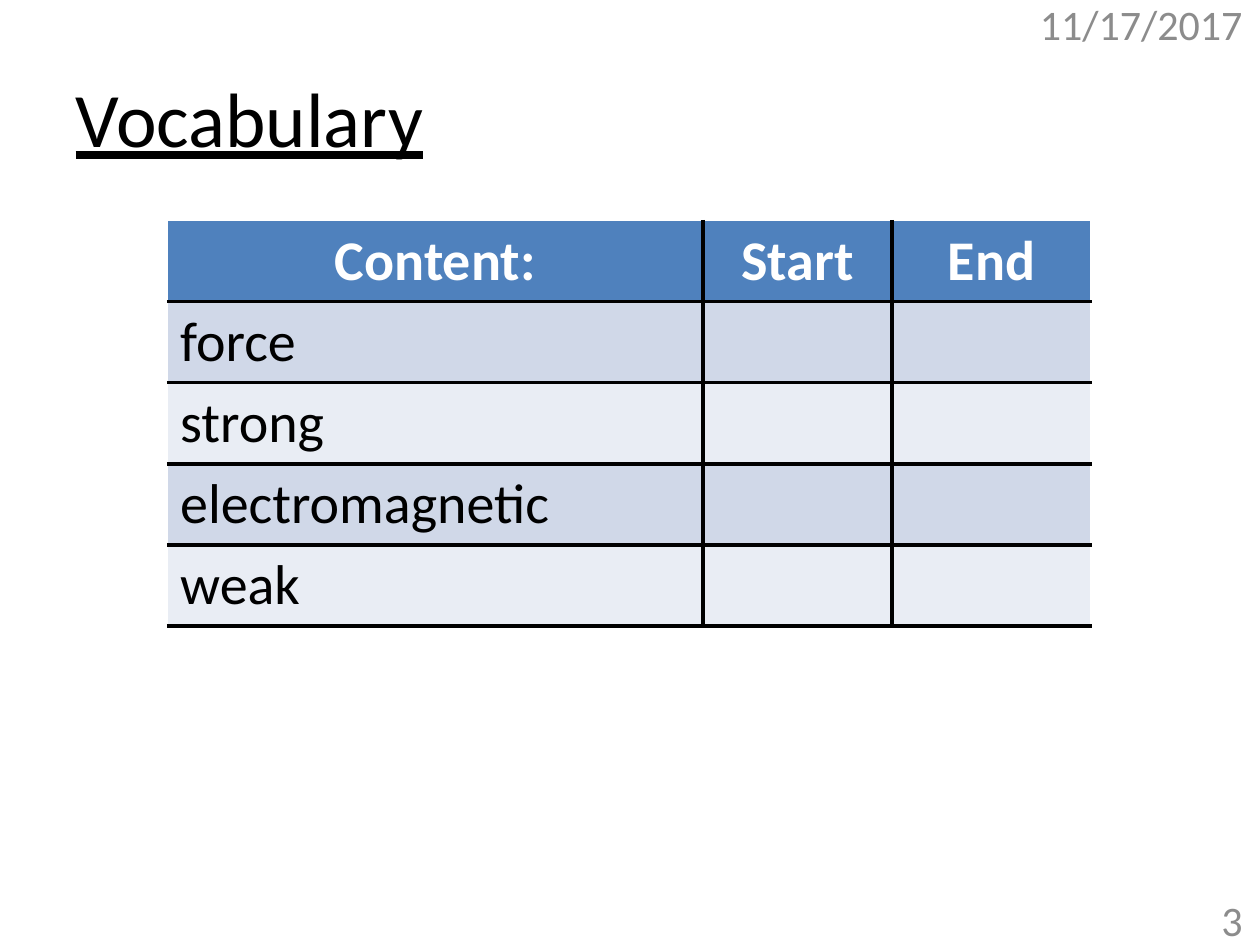
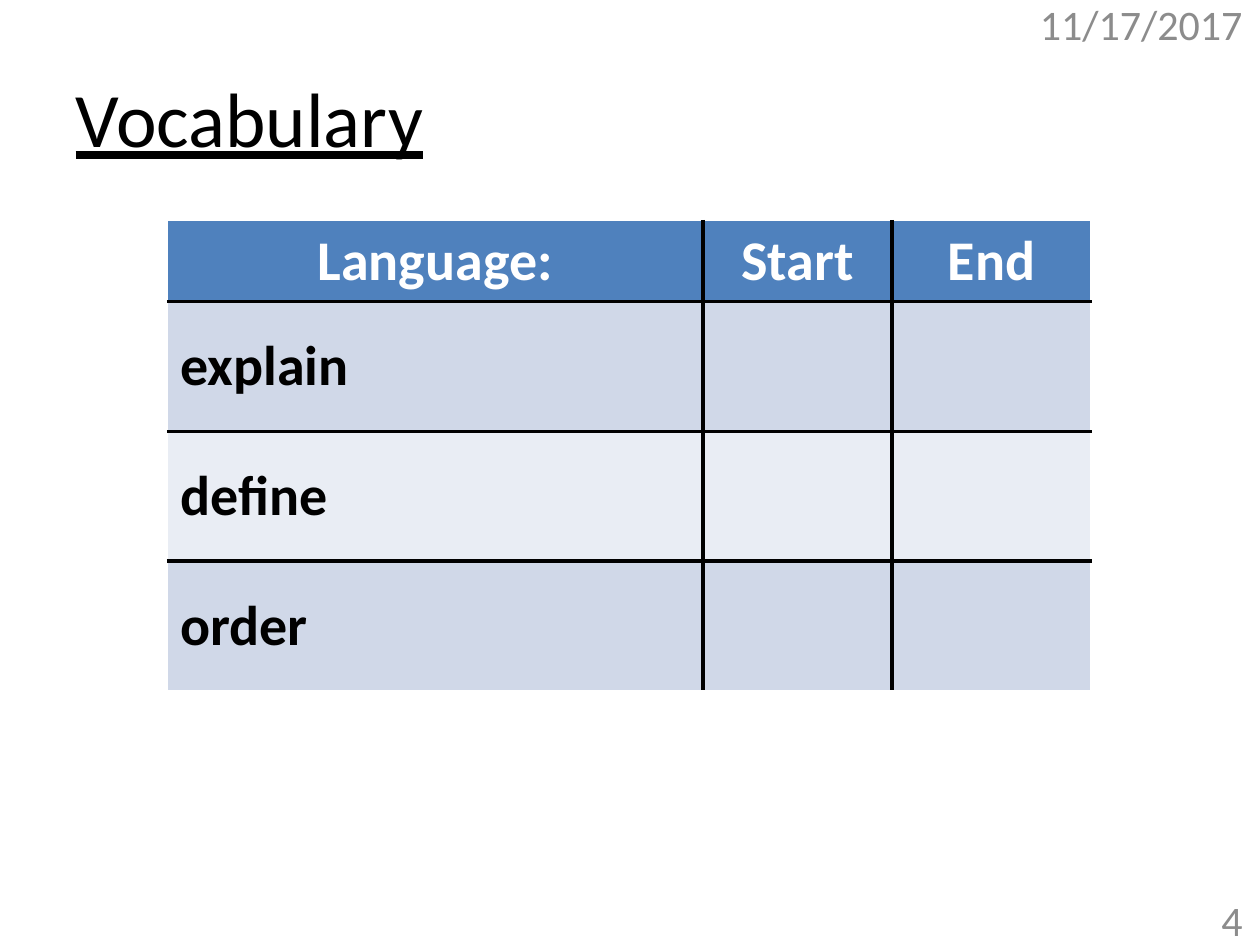
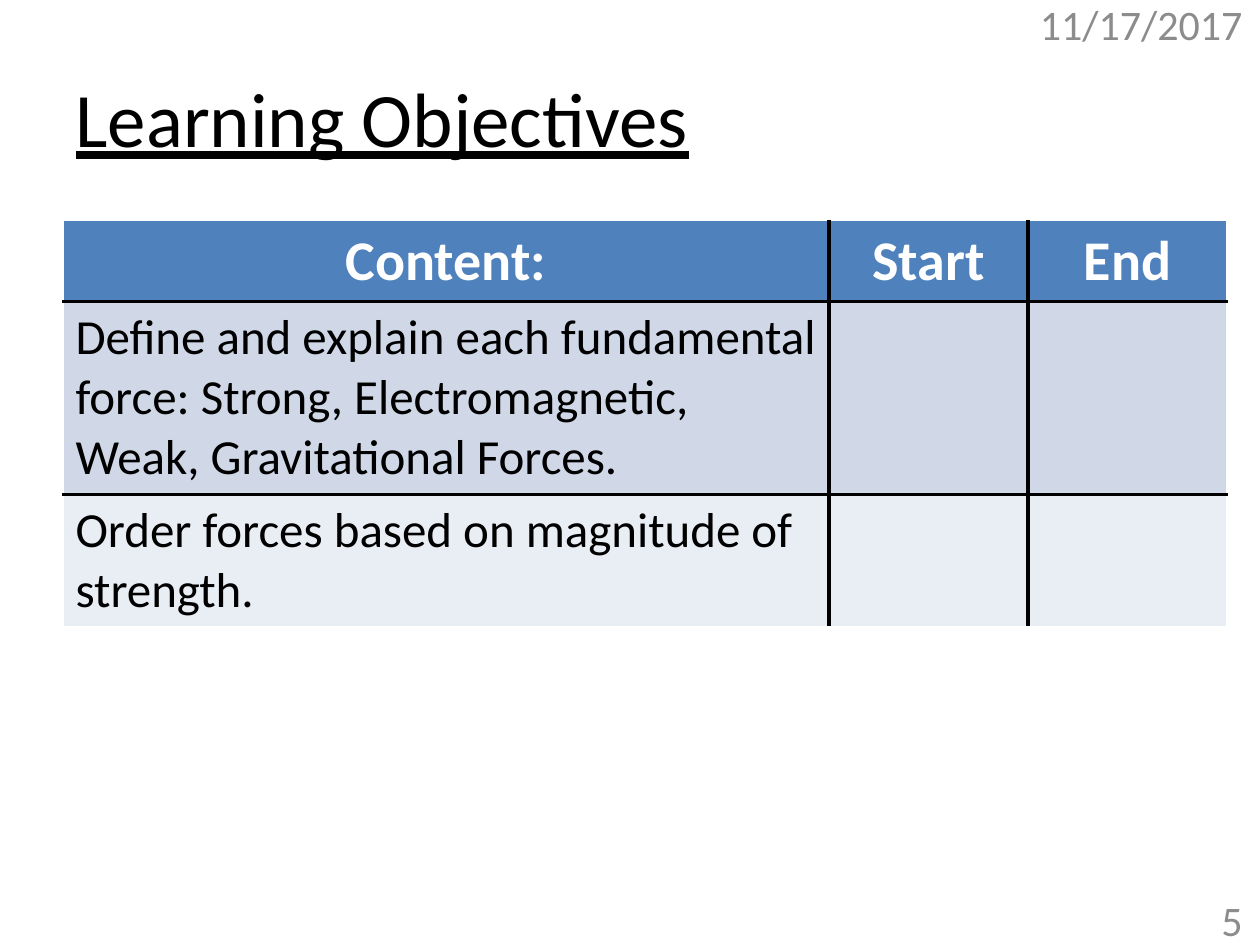
"""Build three lesson slides with vocabulary and objective checklists."""
from dataclasses import dataclass

from lxml.etree import SubElement
from pptx import Presentation
from pptx.dml.color import RGBColor
from pptx.enum.text import MSO_ANCHOR as ANCHOR, PP_ALIGN as ALIGN
from pptx.oxml.ns import qn
from pptx.util import Inches, Pt


@dataclass(frozen=True)
class Theme:
    """Colours, font and type sizes shared by the slides."""
    font: str = "Calibri"
    black: str = "000000"
    white: str = "FFFFFF"
    grey: str = "8C8C8C"
    header: str = "4F81BD"
    bands: tuple = ("D0D8E8", "E9EDF4")
    title_size: int = 44
    table_size: int = 32
    objective_size: int = 28
    footer_size: int = 24
    rule: float = 2.25
    hairline: float = 1


T = Theme()
DATE = "11/17/2017"
FIRST_NUMBER = 3
TABLE_TOP = 1.75
HEADER_HEIGHT = 0.64
TITLE_BOX = (0.5, 0.3, 9, 1.25)
DATE_BOX = (7.92, -0.01, 2.04, 0.4)
NUMBER_BOX = (9.33, 7.1, 0.63, 0.4)

SLIDES = [
    {
        "title": "Vocabulary",
        "heading": "Content:",
        "items": ["force", "strong", "electromagnetic", "weak"],
        "left": 1.33,
        "cols": (4.25, 1.5, 1.58),
        "heights": [0.64] * 4,
        "format": {"size": T.table_size, "bold": False},
        "anchor": ANCHOR.TOP,
        "closed": True,
    },
    {
        "title": "Vocabulary",
        "heading": "Language:",
        "items": ["explain", "define", "order"],
        "left": 1.33,
        "cols": (4.25, 1.5, 1.58),
        "heights": [1.03] * 3,
        "format": {"size": T.table_size, "bold": True},
        "anchor": ANCHOR.MIDDLE,
        "closed": False,
    },
    {
        "title": "Learning Objectives",
        "heading": "Content:",
        "items": [
            "Define and explain each fundamental force: Strong, Electromagnetic, "
            "Weak, Gravitational Forces.",
            "Order forces based on magnitude of strength.",
        ],
        "left": 0.5,
        "cols": (6.08, 1.58, 1.58),
        "heights": [1.53, 1.05],
        "format": {"size": T.objective_size, "bold": False},
        "anchor": ANCHOR.TOP,
        "closed": False,
    },
]


def write(tf, text, size, color=T.black, align=ALIGN.LEFT, anchor=ANCHOR.MIDDLE, **font):
    """Fill a text frame with one formatted paragraph."""
    tf.word_wrap = True
    tf.vertical_anchor = anchor
    p = tf.paragraphs[0]
    p.alignment = align
    r = p.add_run()
    r.text = text
    r.font.color.rgb = RGBColor.from_string(color)
    for name, value in {"name": T.font, "size": Pt(size), **font}.items():
        setattr(r.font, name, value)


def set_borders(cell, inner):
    """Draw black rules on the named sides and white hairlines on the rest."""
    for side in "LRTB":
        color, width = (T.black, T.rule) if side in inner else (T.white, T.hairline)
        ln = SubElement(cell._tc.get_or_add_tcPr(), qn(f"a:ln{side}"), w=str(Pt(width)))
        fill = SubElement(ln, qn("a:solidFill"))
        SubElement(fill, qn("a:srgbClr"), val=color)


def add_checklist(s, data):
    """Add the table of items with empty Start and End columns."""
    rows = [(data["heading"], "Start", "End")]
    rows += [(item, "", "") for item in data["items"]]
    heights = [HEADER_HEIGHT, *data["heights"]]
    cols = data["cols"]
    box = (data["left"], TABLE_TOP, sum(cols), sum(heights))
    table = s.shapes.add_table(len(rows), len(cols), *map(Inches, box)).table
    for col, width in zip(table.columns, cols):
        col.width = Inches(width)
    for i, (row, height) in enumerate(zip(rows, heights)):
        table.rows[i].height = Inches(height)
        for j, text in enumerate(row):
            cell = table.cell(i, j)
            inner = {
                "L": j > 0,
                "R": j < len(cols) - 1,
                "T": i > 0,
                "B": i < len(rows) - 1 or data["closed"],
            }
            set_borders(cell, [side for side, shown in inner.items() if shown])
            cell.fill.solid()
            color = T.bands[(i - 1) % 2] if i else T.header
            cell.fill.fore_color.rgb = RGBColor.from_string(color)
            cell.vertical_anchor = data["anchor"] if i else ANCHOR.MIDDLE
            if i == 0:
                write(cell.text_frame, text, T.table_size, T.white, ALIGN.CENTER, bold=True)
            elif text:
                write(cell.text_frame, text, anchor=data["anchor"], **data["format"])


def add_slide(prs, data, number):
    """Add one slide with its title, checklist, date and number."""
    s = prs.slides.add_slide(prs.slide_layouts[5])
    title = s.shapes.title
    for name, value in zip(("left", "top", "width", "height"), TITLE_BOX):
        setattr(title, name, Inches(value))
    write(title.text_frame, data["title"], T.title_size, underline=True)
    add_checklist(s, data)
    for box, text in ((DATE_BOX, DATE), (NUMBER_BOX, str(number))):
        sp = s.shapes.add_textbox(*map(Inches, box))
        write(sp.text_frame, text, T.footer_size, T.grey, ALIGN.RIGHT)


def main():
    """Build and save the presentation."""
    prs = Presentation()
    prs.slide_width, prs.slide_height = Inches(10), Inches(7.5)
    for number, data in enumerate(SLIDES, FIRST_NUMBER):
        add_slide(prs, data, number)
    prs.save("out.pptx")


if __name__ == "__main__":
    main()
